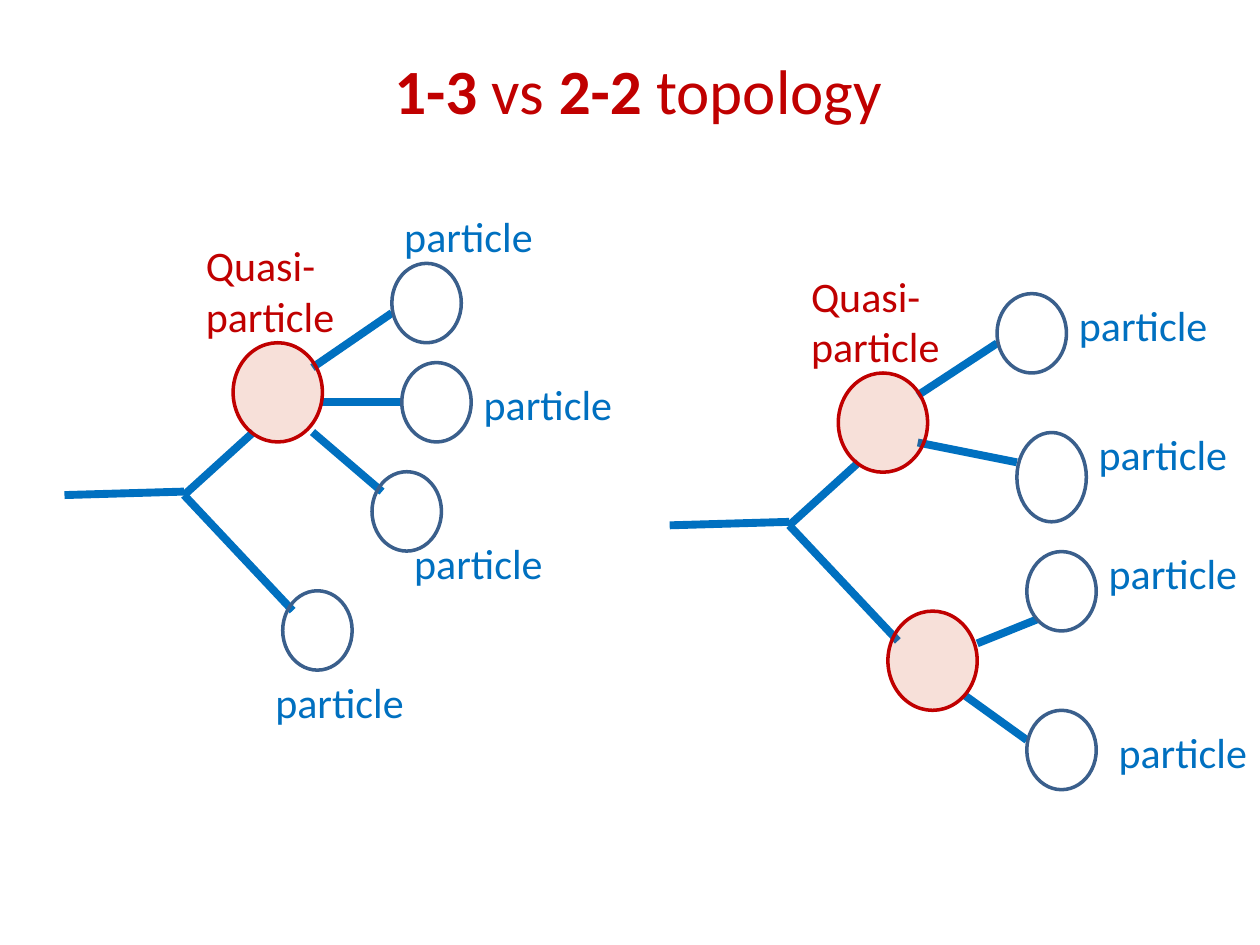
from lxml.etree import SubElement
from pptx import Presentation
from pptx.dml.color import RGBColor
from pptx.enum.shapes import MSO_CONNECTOR, MSO_SHAPE
from pptx.oxml.ns import qn
from pptx.util import Cm, Pt

COLORS = {"red": "C00000", "blue": "0070C0", "outline": "3A5F8C", "quasi": "CC3300"}
PARTICLE_SIZE = (1.4, 1.6)
QUASI_SIZE = (1.8, 2.0)
STEM_EDGES = [(0, 5.87, 2.41, 5.8), (2.41, 5.87, 3.81, 4.6), (2.41, 5.87, 4.6, 8.2)]
UPPER_QUASI = (3.4, 2.8)

ONE_THREE = {
    "edges": [(5, 3.3, 6.6, 2.2), (5.2, 4, 6.8, 4), (5, 4.6, 6.4, 5.8)],
    "quasis": [UPPER_QUASI],
    "particles": [(6.6, 1.2), (6.8, 3.2), (6.2, 5.4), (4.4, 7.8)],
    "labels": [(6.6, 0), (8.2, 3.4), (6.8, 6.6), (4, 9.4)],
}
TWO_TWO = {
    "edges": [(5, 3.25, 6.6, 2.2), (5, 4.2, 7, 4.6),
              (6.2, 8.25, 7.4, 7.77), (5.95, 9.3, 7.2, 10.2)],
    "quasis": [UPPER_QUASI, (4.4, 7.6)],
    "particles": [(6.6, 1.2), (7, 4, 1.4, 1.8), (7.2, 6.4), (7.2, 9.6)],
    "labels": [(8, 1.2), (8.4, 3.8), (8.6, 6.2), (8.8, 9.8)],
}


def rgb(name):
    """Return the named colour."""
    return RGBColor.from_string(COLORS[name])


def add_text(slide, box, runs, size, color):
    """Write (wording, bold) runs in a wrapping text box."""
    frame = slide.shapes.add_textbox(*map(Cm, box)).text_frame
    frame.word_wrap = True
    paragraph = frame.paragraphs[0]
    for wording, bold in runs:
        run = paragraph.add_run()
        run.text = wording
        run.font.name = "Calibri"
        run.font.size = Pt(size)
        run.font.bold = bold
        run.font.color.rgb = rgb(color)


def add_edge(slide, start_x, start_y, end_x, end_y):
    """Draw one thick straight branch."""
    edge = slide.shapes.add_connector(
        MSO_CONNECTOR.STRAIGHT, *map(Cm, (start_x, start_y, end_x, end_y)))
    edge.line.color.rgb = rgb("blue")
    edge.line.width = Pt(4.5)
    SubElement(edge._element.spPr, qn("a:effectLst"))


def add_node(slide, box, outline, fill=None):
    """Draw an ellipse, hollow or with a faint fill."""
    node = slide.shapes.add_shape(MSO_SHAPE.OVAL, *map(Cm, box))
    node.shadow.inherit = False
    node.line.color.rgb = rgb(outline)
    node.line.width = Pt(2)
    if fill is None:
        node.fill.background()
        return
    node.fill.solid()
    node.fill.fore_color.rgb = rgb(fill)
    tint = node._element.spPr.find(qn("a:solidFill"))[0]
    SubElement(tint, qn("a:alpha"), val="15000")


def add_title(slide, box):
    """Write the slide heading."""
    runs = [("1-3 ", True), ("vs ", False), ("2-2", True), (" topology", False)]
    add_text(slide, box, runs, 36, "red")


def add_topology(slide, left, top, topology):
    """Draw one decay tree with its top left corner at the given point."""
    for x1, y1, x2, y2 in STEM_EDGES + topology["edges"]:
        add_edge(slide, left + x1, top + y1, left + x2, top + y2)
    for x, y in topology["quasis"]:
        add_node(slide, (left + x, top + y, *QUASI_SIZE), "red", "quasi")
    for x, y, *size in topology["particles"]:
        add_node(slide, (left + x, top + y, *(size or PARTICLE_SIZE)), "outline")
    add_text(slide, (left + 2.6, top + 0.6, 4, 2.3), [("Quasi-particle", False)], 24, "red")
    for x, y in topology["labels"]:
        add_text(slide, (left + x, top + y, 3.3, 1.27), [("particle", False)], 24, "blue")


def main():
    """Build and save the slide."""
    deck = Presentation()
    deck.slide_width, deck.slide_height = Cm(25.4), Cm(19.05)
    slide = deck.slides.add_slide(deck.slide_layouts[6])
    add_title(slide, (7.7, 0.91, 11.4, 1.8))
    add_topology(slide, 1.3, 4.11, ONE_THREE)
    add_topology(slide, 13.5, 4.72, TWO_TWO)
    deck.save("out.pptx")


if __name__ == "__main__":
    main()
